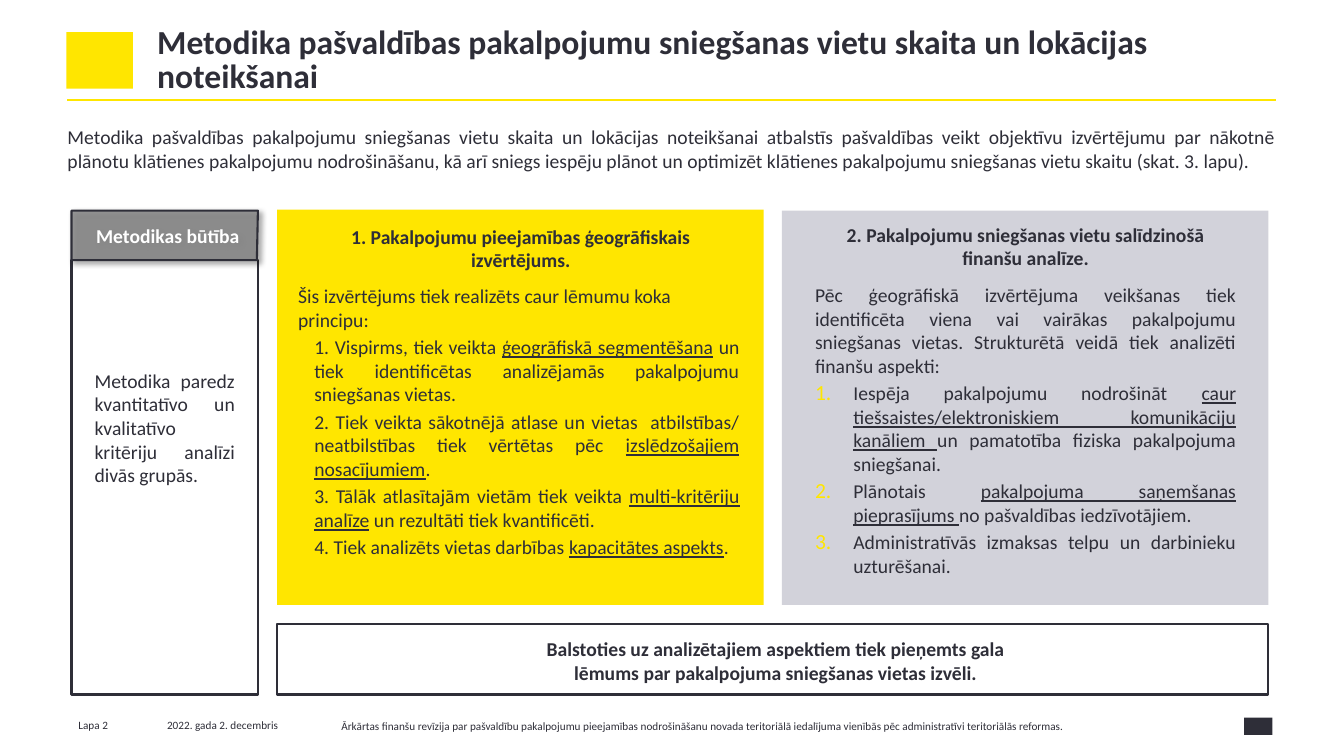
import lxml.etree
import pptx
import pptx.dml.color
import pptx.enum.shapes
import pptx.enum.text
import pptx.oxml.ns
import pptx.util

RGBColor = pptx.dml.color.RGBColor
YELLOW = RGBColor(0xFF, 0xE6, 0x00)
INK = RGBColor(0x2E, 0x2E, 0x38)
SILVER = RGBColor(0xD2, 0xD2, 0xDA)
GRAY = RGBColor(0x80, 0x80, 0x80)
WHITE = RGBColor(0xFF, 0xFF, 0xFF)

PX = 9144
ALIGN = pptx.enum.text.PP_ALIGN
ANCHOR = pptx.enum.text.MSO_ANCHOR
RECTANGLE = pptx.enum.shapes.MSO_SHAPE.RECTANGLE
GAP = pptx.util.Pt(2.8)
SPACED = {"space_before": GAP}
JUSTIFIED = {"alignment": ALIGN.JUSTIFY, "space_before": GAP}
CENTERED = {"alignment": ALIGN.CENTER, "space_before": GAP}
NO_INSETS = (0, 0, 0, 0)
INSETS = (10, 5, 10, 5)


def add_xml(parent, tag, **attributes):
    return lxml.etree.SubElement(parent, pptx.oxml.ns.qn(tag), attributes)


def apply_format(target, values):
    for name, value in values.items():
        setattr(target, name, value)


class SlideBuilder:
    font_name = "Calibri"
    line_width = pptx.util.Pt(1.5)

    def __init__(self, slide):
        self.slide = slide

    def paint(self, shape, fill=None, line=None):
        shape.shadow.inherit = False
        if fill is None:
            shape.fill.background()
        else:
            shape.fill.solid()
            shape.fill.fore_color.rgb = fill
        if line is None:
            shape.line.fill.background()
        else:
            shape.line.color.rgb = line
            shape.line.width = self.line_width
        return shape

    def box(self, left, top, width, height, fill=None, line=None):
        shape = self.slide.shapes.add_shape(
            RECTANGLE, left * PX, top * PX, width * PX, height * PX)
        return self.paint(shape, fill, line)

    def rule(self, left, top, right, color):
        connector = self.slide.shapes.add_connector(
            pptx.enum.shapes.MSO_CONNECTOR.STRAIGHT,
            left * PX, top * PX, right * PX, top * PX)
        connector.line.color.rgb = color
        connector.line.width = self.line_width
        add_xml(connector._element.spPr, "a:effectLst")

    def tab(self, points, fill, line, opacity):
        builder = self.slide.shapes.build_freeform(*points[0], scale=PX)
        builder.add_line_segments(points[1:], close=True)
        shape = self.paint(builder.convert_to_shape(), fill, line)
        properties = shape._element.spPr
        color = properties.find(".//" + pptx.oxml.ns.qn("a:srgbClr"))
        add_xml(color, "a:alpha", val=str(opacity * 1000))
        shadow = add_xml(properties.find(pptx.oxml.ns.qn("a:effectLst")), "a:outerShdw",
                         blurRad="50800", dist="38100", dir="2700000",
                         algn="tl", rotWithShape="0")
        add_xml(add_xml(shadow, "a:srgbClr", val="000000"), "a:alpha", val="40000")
        return shape

    def text(self, left, top, width, height, paragraphs, insets=NO_INSETS, **font):
        shape = self.slide.shapes.add_textbox(left * PX, top * PX, width * PX, height * PX)
        self.fill_text(shape, paragraphs, insets, **font)

    def fill_text(self, shape, paragraphs, insets, anchor=ANCHOR.TOP,
                  size=14, bold=False, color=INK):
        frame = shape.text_frame
        sides = ("margin_left", "margin_top", "margin_right", "margin_bottom")
        apply_format(frame, {"word_wrap": True, "vertical_anchor": anchor,
                             **{side: inset * PX for side, inset in zip(sides, insets)}})
        for index, (content, layout, *extras) in enumerate(paragraphs):
            paragraph = frame.add_paragraph() if index else frame.paragraphs[0]
            apply_format(paragraph, layout)
            for extra in extras:
                extra(paragraph)
            for position, part in enumerate(content.split("_")):
                if part:
                    run = paragraph.add_run()
                    run.text = part
                    apply_format(run.font, {"name": self.font_name, "size": pptx.util.Pt(size),
                                            "bold": bold, "underline": position % 2 == 1})
                    run.font.color.rgb = color


def indented(paragraph):
    paragraph._p.get_or_add_pPr().set("marL", str(16 * PX))


def numbered(paragraph):
    properties = paragraph._p.get_or_add_pPr()
    properties.set("marL", str(38 * PX))
    properties.set("indent", str(-38 * PX))
    add_xml(add_xml(properties, "a:buClr"), "a:srgbClr", val=str(YELLOW))
    add_xml(properties, "a:buSzPct", val="110000")
    add_xml(properties, "a:buFont", typeface="+mj-lt")
    add_xml(properties, "a:buAutoNum", type="arabicPeriod")


GEOGRAPHIC_STEPS = [
    "1. Vispirms, tiek veikta _ģeogrāfiskā segmentēšana_ un tiek identificētas "
    "analizējamās pakalpojumu sniegšanas vietas.",
    "2. Tiek veikta sākotnējā atlase un vietas  atbilstības/ neatbilstības tiek "
    "vērtētas pēc _izslēdzošajiem nosacījumiem_.",
    "3. Tālāk atlasītajām vietām tiek veikta _multi-kritēriju analīze_ un rezultāti "
    "tiek kvantificēti.",
    "4. Tiek analizēts vietas darbības _kapacitātes aspekts_.",
]
FINANCIAL_ASPECTS = [
    "Iespēja pakalpojumu nodrošināt _caur tiešsaistes/elektroniskiem komunikāciju "
    "kanāliem _un pamatotība fiziska pakalpojuma sniegšanai.",
    "Plānotais _pakalpojuma saņemšanas pieprasījums _no pašvaldības iedzīvotājiem.",
    "Administratīvās izmaksas telpu un darbinieku uzturēšanai.",
]
FOOTERS = [
    (68, 708, 73, "Lapa 2"),
    (156, 708, 161, "2022. gada 2. decembris"),
    (329, 709, 844, "Ārkārtas finanšu revīzija par pašvaldību pakalpojumu pieejamības "
     "nodrošināšanu novada teritoriālā iedalījuma vienībās pēc administratīvi "
     "teritoriālās reformas."),
]


def main():
    presentation = pptx.Presentation()
    apply_format(presentation, {"slide_width": 1334 * PX, "slide_height": 750 * PX})
    builder = SlideBuilder(presentation.slides.add_slide(presentation.slide_layouts[6]))

    builder.box(66, 32, 66, 56, fill=YELLOW)
    builder.rule(67, 99, 1267, YELLOW)
    builder.text(156, 27, 1112, 65, [(
        "Metodika pašvaldības pakalpojumu sniegšanas vietu skaita un lokācijas noteikšanai",
        {"line_spacing": 0.85})], size=24, bold=True)
    builder.text(67, 124, 1200, 87, [(
        "Metodika pašvaldības pakalpojumu sniegšanas vietu skaita un lokācijas noteikšanai "
        "atbalstīs pašvaldības veikt objektīvu izvērtējumu par nākotnē plānotu klātienes "
        "pakalpojumu nodrošināšanu, kā arī sniegs iespēju plānot un optimizēt klātienes "
        "pakalpojumu sniegšanas vietu skaitu (skat. 3. lapu).", JUSTIFIED)])

    builder.box(71, 258, 185, 431, line=INK)
    essence = builder.tab([(71, 209), (256, 209), (255, 258), (71, 258)], GRAY, INK, 77)
    builder.fill_text(essence, [("Metodikas būtība", {"alignment": ALIGN.CENTER})],
                      (16, 5, 10, 5), anchor=ANCHOR.MIDDLE, bold=True, color=WHITE)
    builder.text(84, 361, 159, 175, [(
        "Metodika paredz kvantitatīvo un kvalitatīvo kritēriju analīzi divās grupās.",
        {"alignment": ALIGN.JUSTIFY})], INSETS)

    builder.box(275, 208, 483, 392, fill=YELLOW)
    builder.text(327, 223, 380, 48, [(
        "1. Pakalpojumu pieejamības ģeogrāfiskais izvērtējums.", CENTERED)], bold=True)
    builder.text(296, 282, 438, 48, [
        ("Šis izvērtējums tiek realizēts caur lēmumu koka principu:", SPACED),
        *((step, JUSTIFIED, indented) for step in GEOGRAPHIC_STEPS)])

    builder.box(776, 209, 483, 391, fill=SILVER)
    builder.text(809, 221, 418, 48, [(
        "2. Pakalpojumu sniegšanas vietu salīdzinošā finanšu analīze.", CENTERED)], bold=True)
    builder.text(809, 281, 418, 48, [
        ("Pēc ģeogrāfiskā izvērtējuma veikšanas tiek identificēta viena vai vairākas "
         "pakalpojumu sniegšanas vietas. Strukturētā veidā tiek analizēti finanšu aspekti:",
         JUSTIFIED),
        *((aspect, JUSTIFIED, numbered) for aspect in FINANCIAL_ASPECTS)])

    builder.box(275, 619, 984, 70, line=INK)
    builder.text(510, 632, 520, 48, [(
        "Balstoties uz analizētajiem aspektiem tiek pieņemts gala lēmums par pakalpojuma "
        "sniegšanas vietas izvēli.", CENTERED)], bold=True)

    for left, top, width, label in FOOTERS:
        builder.text(left, top, width, 20, [(label, {})], INSETS, size=8)
    builder.box(1235, 712, 28, 17, fill=INK)

    presentation.save("out.pptx")


if __name__ == "__main__":
    main()
